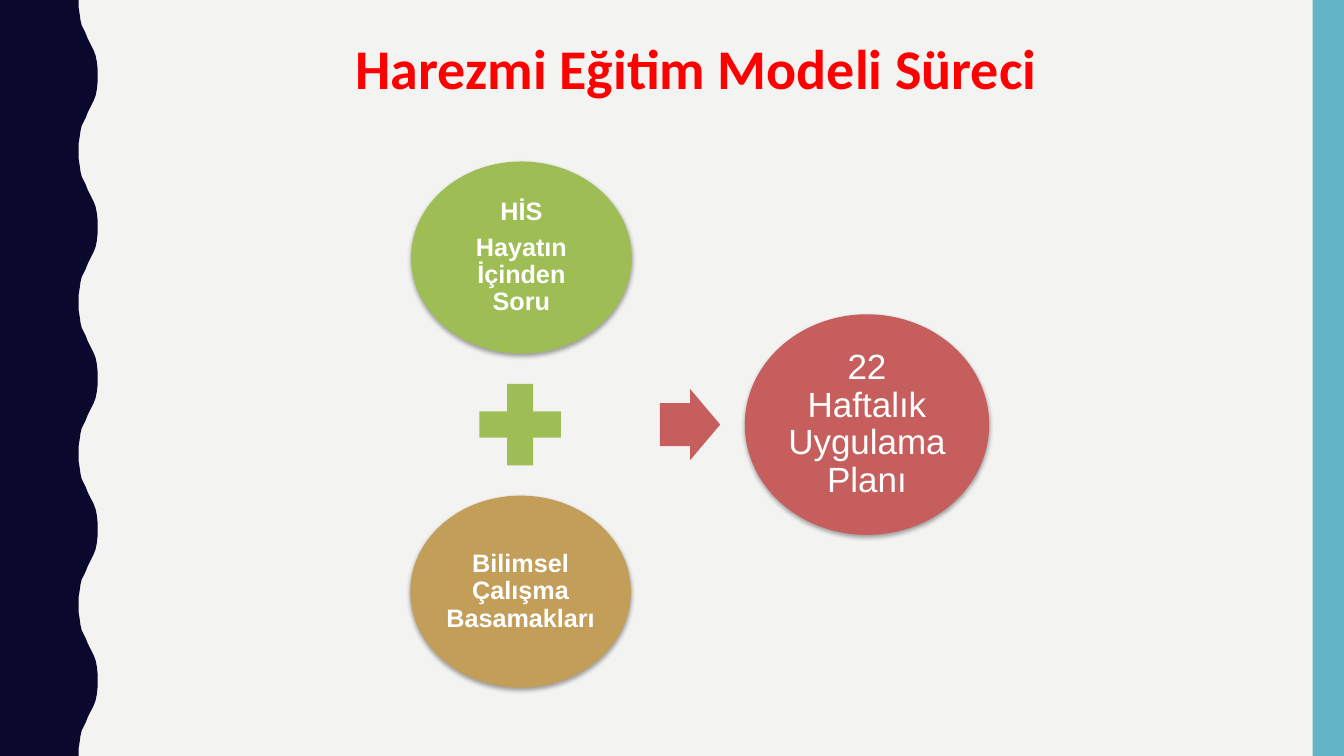
"""Build the Harezmi education model process slide."""
from lxml import etree
from pptx import Presentation
from pptx.dml.color import RGBColor
from pptx.enum import shapes, text
from pptx.oxml import parse_xml
from pptx.oxml.ns import nsdecls
from pptx.util import Cm, Pt

COLORS = {
    "bg": "F3F3F2", "navy": "0B082E", "teal": "62B4C6", "title": "FF0000",
    "green": "9EBE55", "gold": "C29E59", "red": "C65E5E", "white": "FFFFFF",
}
SHADOW = (
    f'<a:outerShdw {nsdecls("a")} blurRad="40000" dist="23000" dir="5400000" rotWithShape="0">'
    '<a:srgbClr val="000000"><a:alpha val="35000"/></a:srgbClr></a:outerShdw>'
)


def paint(sp, color):
    sp.shadow.inherit = False
    sp.fill.solid()
    sp.fill.fore_color.rgb = RGBColor.from_string(COLORS[color])
    sp.line.fill.background()


def style(p, font, size, color, bold):
    p.alignment = text.PP_ALIGN.CENTER
    p.line_spacing = 0.9
    for r in p.runs:
        r.font.name = font
        r.font.size = Pt(size)
        r.font.bold = bold
        r.font.color.rgb = RGBColor.from_string(COLORS[color])


prs = Presentation()
prs.slide_width, prs.slide_height = Cm(33.87), Cm(19.05)
s = prs.slides.add_slide(prs.slide_layouts[5])
s.background.fill.solid()
s.background.fill.fore_color.rgb = RGBColor.from_string(COLORS["bg"])

half_wave = [
    (1.98, 0), (1.98, 0.18), (2.01, 0.36), (2.03, 0.51), (2.06, 0.64),
    (2.11, 0.74), (2.16, 0.84), (2.21, 0.97), (2.26, 1.07), (2.31, 1.17),
    (2.36, 1.27), (2.41, 1.4), (2.44, 1.55), (2.46, 1.73), (2.46, 1.9),
]
period = 3.81
wave = half_wave + [(x, period - y) for x, y in half_wave[-2::-1]]
edge = [(Cm(x), Cm(y + i * period)) for i in range(5) for x, y in wave]
builder = s.shapes.build_freeform(0, 0)
builder.add_line_segments(edge + [(0, Cm(19.05))], close=True)
paint(builder.convert_to_shape(), "navy")

band = s.shapes.add_shape(shapes.MSO_SHAPE.RECTANGLE, Cm(33.08), 0, Cm(0.79), Cm(19.05))
paint(band, "teal")

title = s.shapes.title
title.left, title.top, title.width, title.height = Cm(5.74), Cm(0.91), Cm(23.6), Cm(1.85)
title.text_frame.text = "Harezmi Eğitim Modeli Süreci"
title.text_frame.vertical_anchor = text.MSO_ANCHOR.TOP
style(title.text_frame.paragraphs[0], "Calibri", 40, "title", True)

circles = [
    (10.36, 4.07, 5.56, 4.84, "green", "HİS\nHayatın İçinden Soru", 18, True),
    (10.34, 12.49, 5.56, 4.84, "gold", "Bilimsel Çalışma Basamakları", 18, True),
    (18.77, 7.92, 6.16, 5.56, "red", "22 Haftalık Uygulama Planı", 25, False),
]
for x, y, w, h, color, label, size, bold in circles:
    sp = s.shapes.add_shape(shapes.MSO_SHAPE.OVAL, Cm(x), Cm(y), Cm(w), Cm(h))
    paint(sp, color)
    sp.element.spPr.find("{*}effectLst").append(parse_xml(SHADOW))
    tf = sp.text_frame
    tf.text = label
    tf.word_wrap = True
    tf.vertical_anchor = text.MSO_ANCHOR.MIDDLE
    tf.margin_left = tf.margin_right = tf.margin_top = tf.margin_bottom = Cm(size * 0.0035)
    for p in tf.paragraphs:
        style(p, "Arial", size, "white", bold)
        p.space_after = Pt(size * 0.35)

plus = s.shapes.add_shape(shapes.MSO_SHAPE.MATH_PLUS, Cm(11.71), Cm(9.3), Cm(2.8), Cm(2.8))
paint(plus, "green")

arrow = s.shapes.add_shape(shapes.MSO_SHAPE.RIGHT_ARROW, Cm(16.63), Cm(9.8), Cm(1.52), Cm(1.8))
arrow.adjustments[0] = 0.6
paint(arrow, "red")

prs.save("out.pptx")
